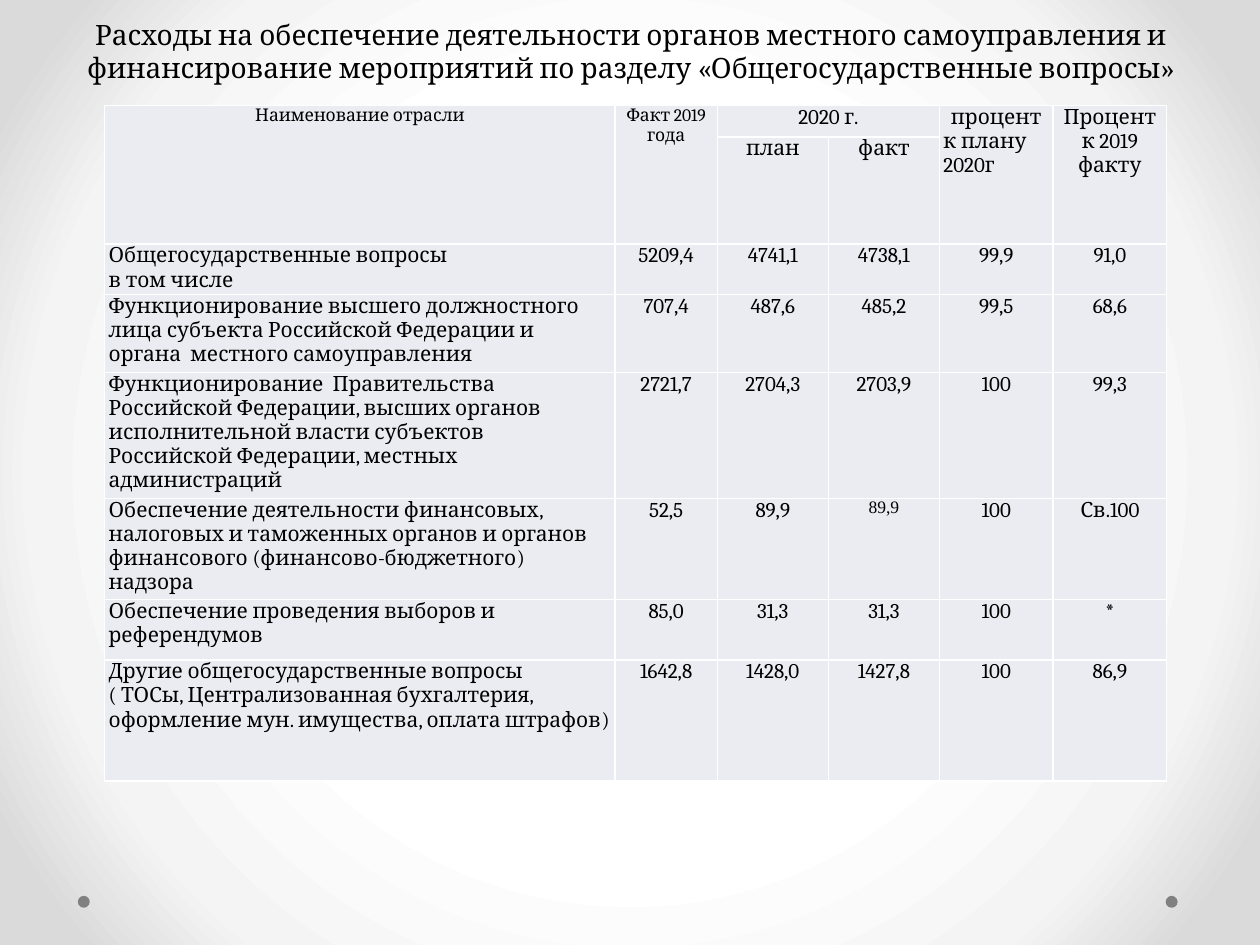
"""Build a slide with a table of local government spending for 2019 and 2020."""
from lxml.etree import SubElement
from pptx import Presentation
from pptx.dml.color import RGBColor
from pptx.enum.shapes import MSO_SHAPE as Shape
from pptx.enum.text import MSO_ANCHOR as Anchor, PP_ALIGN as Align
from pptx.oxml import parse_xml
from pptx.oxml.ns import nsdecls, qn
from pptx.util import Cm, Pt

COLORS = {"text": "000000", "cell": "EAECF2", "border": "FFFFFF", "dot": "808080"}
GRADIENT = {50: "FFFFFF", 76: "F4F4F4", 92: "DADADA"}


def write(frame, text, size=12, font="Cambria", align=Align.CENTER):
    frame.word_wrap = True
    for index, line in enumerate(text.split("\n")):
        paragraph = frame.add_paragraph() if index else frame.paragraphs[0]
        paragraph.alignment = align
        run = paragraph.add_run()
        run.text = line
        run.font.size = Pt(size)
        run.font.name = font
        run.font.color.rgb = RGBColor.from_string(COLORS["text"])


def style_cell(cell):
    cell.margin_left = cell.margin_right = Cm(0.08)
    cell.margin_top = cell.margin_bottom = 0
    properties = cell._tc.get_or_add_tcPr()
    for side in ("a:lnL", "a:lnR", "a:lnT", "a:lnB"):
        line = SubElement(properties, qn(side), w=str(Pt(1)))
        SubElement(SubElement(line, qn("a:solidFill")), qn("a:srgbClr"), val=COLORS["border"])
    cell.fill.solid()
    cell.fill.fore_color.rgb = RGBColor.from_string(COLORS["cell"])


presentation = Presentation()
presentation.slide_width = Cm(25.4)
presentation.slide_height = Cm(19.05)
slide = presentation.slides.add_slide(presentation.slide_layouts[6])

stops = "".join(
    f'<a:gs pos="{position * 1000}"><a:srgbClr val="{color}"/></a:gs>'
    for position, color in GRADIENT.items()
)
background = parse_xml(
    f'<p:bg {nsdecls("p", "a")}><p:bgPr><a:gradFill rotWithShape="1"><a:gsLst>{stops}</a:gsLst>'
    '<a:path path="circle"><a:fillToRect l="50000" t="50000" r="50000" b="50000"/></a:path>'
    "</a:gradFill><a:effectLst/></p:bgPr></p:bg>"
)
slide.element.cSld.insert(0, background)

for left in (23.5, 1.57):
    dot = slide.shapes.add_shape(Shape.OVAL, Cm(left), Cm(18.06), Cm(0.24), Cm(0.24))
    dot.shadow.inherit = False
    dot.fill.solid()
    dot.fill.fore_color.rgb = RGBColor.from_string(COLORS["dot"])
    dot.line.fill.background()

title = slide.shapes.add_textbox(Cm(1.3), Cm(-0.86), Cm(22.86), Cm(2.69))
title.text_frame.vertical_anchor = Anchor.BOTTOM
write(
    title.text_frame,
    "Расходы на обеспечение деятельности органов местного самоуправления и "
    "финансирование мероприятий по разделу «Общегосударственные вопросы»",
    size=16,
)

column_widths = [10.29, 2.06, 2.24, 2.24, 2.29, 2.29]
row_heights = [0.63, 2.16, 0.99, 1.57, 2.21, 1.8, 1.22, 2.44]
expenses = [
    ("Общегосударственные вопросы\nв том числе",
     "5209,4", "4741,1", "4738,1", "99,9", "91,0"),
    ("Функционирование высшего должностного лица субъекта Российской Федерации и "
     "органа  местного самоуправления",
     "707,4", "487,6", "485,2", "99,5", "68,6"),
    ("Функционирование  Правительства Российской Федерации, высших органов "
     "исполнительной власти субъектов  Российской Федерации, местных администраций",
     "2721,7", "2704,3", "2703,9", "100", "99,3"),
    ("Обеспечение деятельности финансовых, налоговых и таможенных органов и органов "
     "финансового (финансово-бюджетного) надзора",
     "52,5", "89,9", "89,9", "100", "Св.100"),
    ("Обеспечение проведения выборов и референдумов",
     "85,0", "31,3", "31,3", "100", "*"),
    ("Другие общегосударственные вопросы\n( ТОСы, Централизованная бухгалтерия, "
     "оформление мун. имущества, оплата штрафов)",
     "1642,8", "1428,0", "1427,8", "100", "86,9"),
]

table = slide.shapes.add_table(
    len(row_heights), len(column_widths), Cm(2.11), Cm(2.13),
    Cm(sum(column_widths)), Cm(sum(row_heights)),
).table
table.first_row = table.horz_banding = False
for column, width in zip(table.columns, column_widths):
    column.width = Cm(width)
for row, height in zip(table.rows, row_heights):
    row.height = Cm(height)
for cell in table.iter_cells():
    style_cell(cell)

for column in (0, 1, 4, 5):
    table.cell(0, column).merge(table.cell(1, column))
table.cell(0, 2).merge(table.cell(0, 3))

headings = [
    (0, 0, "Наименование отрасли", 10),
    (0, 1, "Факт 2019 года", 10),
    (0, 2, "2020 г.", 12),
    (0, 4, "процент\nк плану 2020г", 12),
    (0, 5, "Процент к 2019\nфакту", 12),
    (1, 2, "план", 12),
    (1, 3, "факт", 12),
]
for row, column, text, size in headings:
    write(table.cell(row, column).text_frame, text, size=size)
table.cell(0, 4).text_frame.paragraphs[1].alignment = Align.LEFT

special_formats = {(5, 3): {"size": 10, "font": "Times New Roman"}}
for row, values in enumerate(expenses, start=2):
    for column, text in enumerate(values):
        align = Align.CENTER if column else Align.LEFT
        text_format = special_formats.get((row, column), {})
        write(table.cell(row, column).text_frame, text, align=align, **text_format)

presentation.save("out.pptx")
